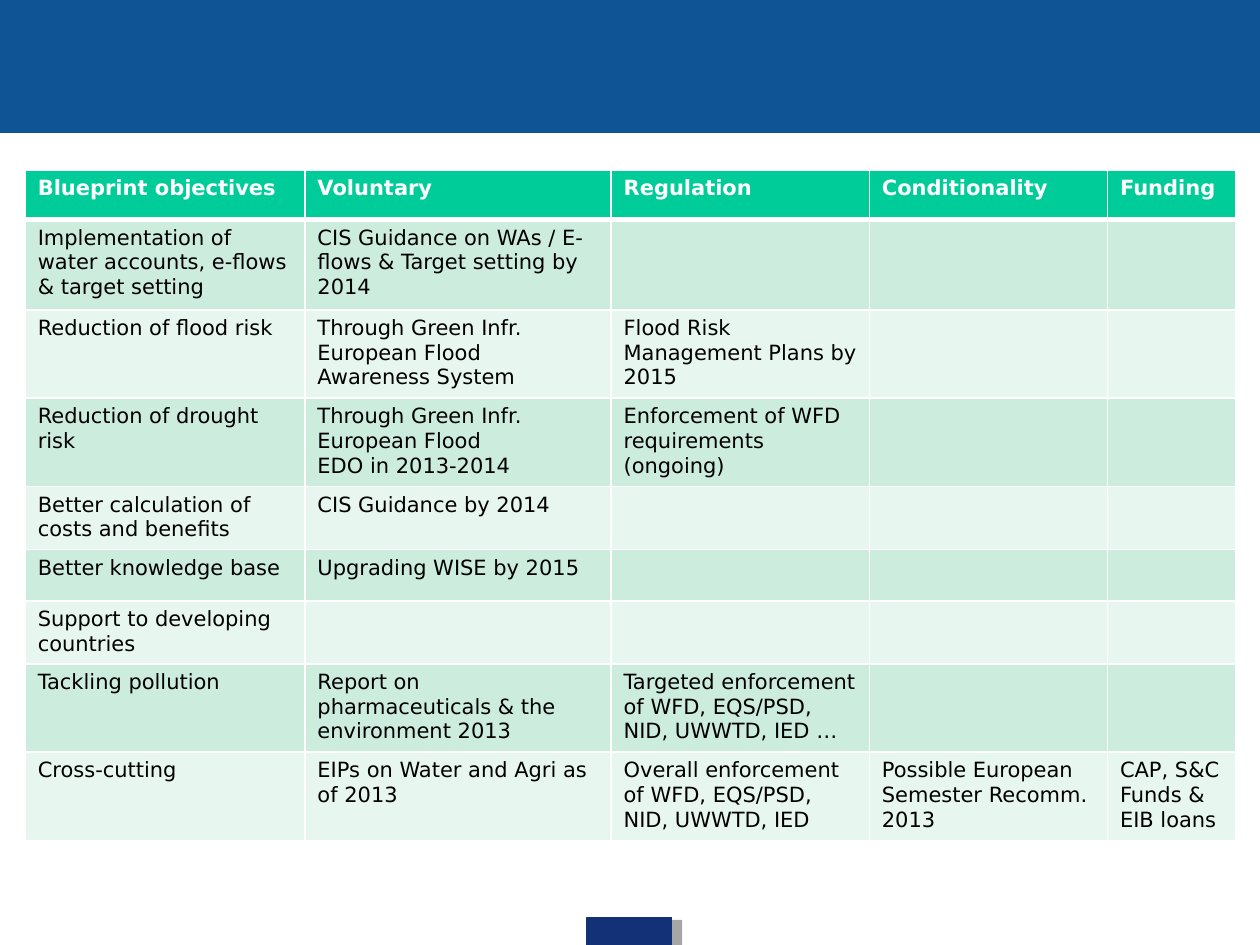
from lxml import etree
from pptx import Presentation
from pptx.dml.color import RGBColor
from pptx.enum.shapes import MSO_SHAPE
from pptx.oxml import parse_xml
from pptx.oxml.ns import nsdecls, qn
from pptx.util import Inches, Pt

RECT = MSO_SHAPE.RECTANGLE
FONT = "DejaVu Sans"
WHITE, BLACK = "FFFFFF", "000000"
HEADER_FILL = "00CC99"
BAND_FILLS = ["CCECDE", "E7F6EF"]

BANNER = ((0, 0, 10, 1.05), "0F5494")
FOOTER_MARK = ((4.66, 7.28, 0.67, 0.22), "133176")

TABLE_LEFT, TABLE_TOP = 0.2, 1.35
COL_WIDTHS = [2.22, 2.43, 2.05, 1.89, 1.02]
ROW_HEIGHTS = [0.39, 0.72, 0.7, 0.7, 0.5, 0.41, 0.5, 0.7, 0.7]

# Cells missing at the end of a row stay empty
ROWS = [
    ["Blueprint objectives", "Voluntary", "Regulation", "Conditionality", "Funding"],
    ["Implementation of water accounts, e-flows & target setting",
     "CIS Guidance on WAs / E-flows & Target setting by 2014"],
    ["Reduction of flood risk",
     "Through Green Infr. European Flood Awareness System",
     "Flood Risk Management Plans by 2015"],
    ["Reduction of drought risk",
     "Through Green Infr. European Flood\nEDO in 2013-2014",
     "Enforcement of WFD requirements (ongoing)"],
    ["Better calculation of costs and benefits", "CIS Guidance by 2014"],
    ["Better knowledge base", "Upgrading WISE by 2015"],
    ["Support to developing countries"],
    ["Tackling pollution",
     "Report on pharmaceuticals & the environment 2013",
     "Targeted enforcement of WFD, EQS/PSD, NID, UWWTD, IED …"],
    ["Cross-cutting",
     "EIPs on Water and Agri as of 2013",
     "Overall enforcement of WFD, EQS/PSD, NID, UWWTD, IED",
     "Possible European Semester Recomm. 2013",
     "CAP, S&C Funds & EIB loans"],
]


def rgb(value):
    return RGBColor.from_string(value)


def add_block(s, box, color):
    sp = s.shapes.add_shape(RECT, *map(Inches, box))
    sp.shadow.inherit = False
    sp.fill.solid()
    sp.fill.fore_color.rgb = rgb(color)
    sp.line.color.rgb = rgb(color)
    sp.line.width = Pt(0.75)
    return sp


def add_shadow(sp, color, opacity, distance, angle):
    """Give a shape a hard shadow: opacity in percent, distance in points."""
    effects = sp.element.spPr.find(qn("a:effectLst"))
    effects.append(parse_xml(
        f'<a:outerShdw {nsdecls("a")} blurRad="0" dist="{Pt(distance)}" '
        f'dir="{angle * 60000}" algn="ctr" rotWithShape="0"><a:srgbClr val="{color}">'
        f'<a:alpha val="{opacity * 1000}"/></a:srgbClr></a:outerShdw>'))


def set_borders(cell, widths):
    tc_pr = cell._tc.get_or_add_tcPr()
    for side, width in widths.items():
        ln = etree.SubElement(tc_pr, qn(f"a:ln{side}"), w=str(Pt(width)))
        fill = etree.SubElement(ln, qn("a:solidFill"))
        etree.SubElement(fill, qn("a:srgbClr"), val=WHITE)


def fill_cell(cell, text, row):
    header = row == 0
    set_borders(cell, {"L": 1, "R": 1, "T": 3 if row == 1 else 1, "B": 3 if header else 1})
    cell.fill.solid()
    cell.fill.fore_color.rgb = rgb(HEADER_FILL if header else BAND_FILLS[(row - 1) % 2])
    if not text:
        return
    cell.text = text
    for p in cell.text_frame.paragraphs:
        for r in p.runs:
            for name, value in {"name": FONT, "size": Pt(12), "bold": header}.items():
                setattr(r.font, name, value)
            r.font.color.rgb = rgb(WHITE if header else BLACK)


def add_objectives_table(s):
    table = s.shapes.add_table(
        len(ROWS), len(COL_WIDTHS), Inches(TABLE_LEFT), Inches(TABLE_TOP),
        Inches(sum(COL_WIDTHS)), Inches(sum(ROW_HEIGHTS))).table
    for column, width in zip(table.columns, COL_WIDTHS):
        column.width = Inches(width)
    for i, (texts, height) in enumerate(zip(ROWS, ROW_HEIGHTS)):
        table.rows[i].height = Inches(height)
        for j in range(len(COL_WIDTHS)):
            fill_cell(table.cell(i, j), texts[j] if j < len(texts) else "", i)


def main():
    prs = Presentation()
    prs.slide_width, prs.slide_height = Inches(10), Inches(7.5)
    s = prs.slides.add_slide(prs.slide_layouts[6])
    add_block(s, *BANNER)
    add_shadow(add_block(s, *FOOTER_MARK), BLACK, opacity=35, distance=6, angle=18)
    add_objectives_table(s)
    prs.save("out.pptx")


if __name__ == "__main__":
    main()
